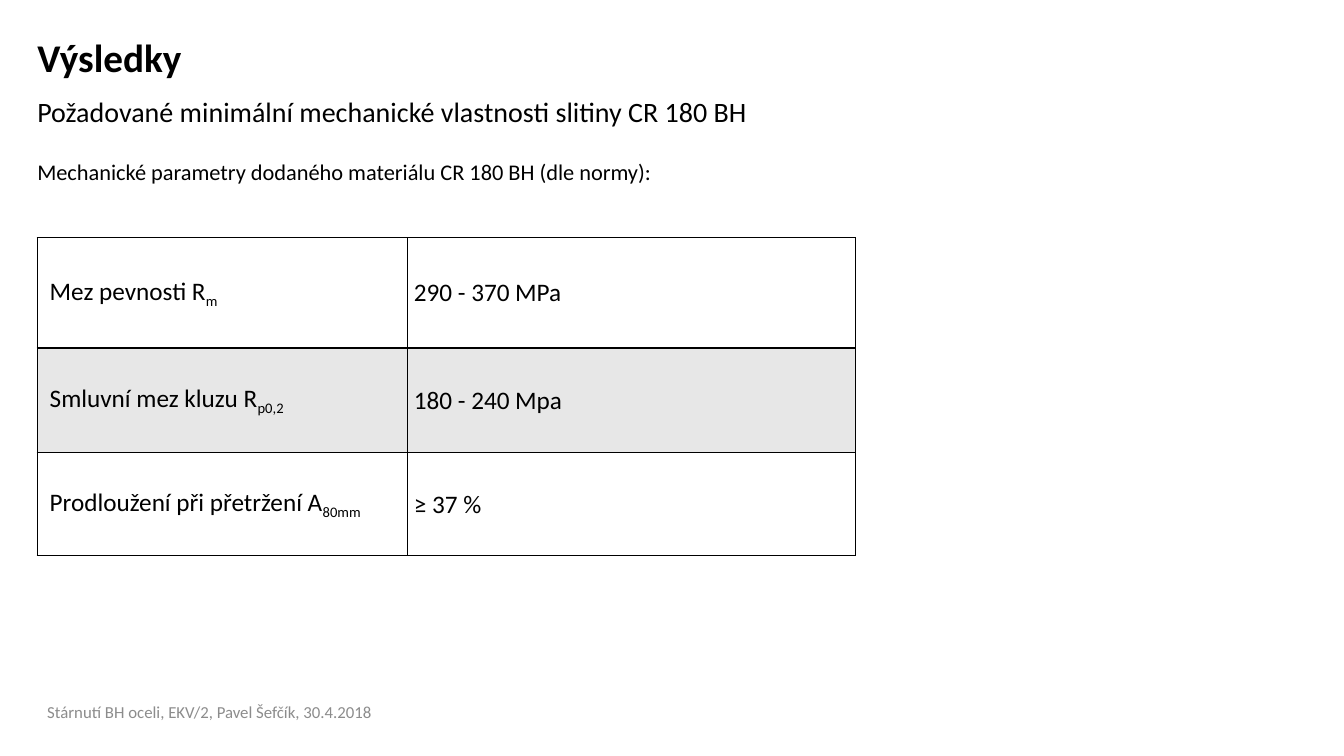
"""Build the slide with the required mechanical properties of CR 180 BH."""
from lxml.etree import SubElement
from pptx import Presentation
from pptx.dml.color import RGBColor
from pptx.enum.text import MSO_ANCHOR, MSO_AUTO_SIZE, PP_ALIGN
from pptx.oxml.ns import qn
from pptx.util import Pt

LEFT = 26.64
WIDTH = 787.68
BLACK = "000000"
BAND = "E7E7E7"
PROPERTIES = [
    ("Mez pevnosti R", "m", "290 - 370 MPa"),
    ("Smluvní mez kluzu R", "p0,2", "180 - 240 Mpa"),
    ("Prodloužení při přetržení A", "80mm", "≥ 37 %"),
]


def colour(value):
    """Turn a hex string into a colour."""
    return RGBColor.from_string(value)


def write(para, text, size=18, fill=BLACK, bold=False, baseline=None, font="Calibri"):
    """Add a formatted span of text to a paragraph."""
    span = para.add_run()
    span.text = text
    span.font.name = font
    span.font.size = Pt(size)
    span.font.bold = bold
    span.font.color.rgb = colour(fill)
    if baseline is not None:
        span.font._element.set("baseline", str(baseline * 1000))


class SlideBuilder:
    """Hold the style and the current slide."""

    def __init__(self, deck):
        """Add a page with a title and a body."""
        self.page = deck.slides.add_slide(deck.slide_layouts[1])

    def place(self, box, top, height, text, width=WIDTH, inset=(0, 0),
              anchor=MSO_ANCHOR.TOP, spacing=None, **style):
        """Position a text shape and write one paragraph in it."""
        box.left, box.top, box.width, box.height = map(Pt, (LEFT, top, width, height))
        frame = box.text_frame
        frame.word_wrap = True
        frame.auto_size = MSO_AUTO_SIZE.NONE
        frame.vertical_anchor = anchor
        frame.margin_left = frame.margin_right = Pt(inset[0])
        frame.margin_top = frame.margin_bottom = Pt(inset[1])
        para = frame.paragraphs[0]
        para.alignment = PP_ALIGN.LEFT
        para.space_before = Pt(0)
        para.line_spacing = spacing
        write(para, text, **style)
        return para

    def title(self, *args, **style):
        """Fill the title placeholder."""
        self.place(self.page.shapes.title, *args, **style)

    def body(self, *args, **style):
        """Fill the body placeholder without a bullet."""
        para = self.place(self.page.placeholders[1], *args, **style)
        properties = para._p.get_or_add_pPr()
        properties.set("marL", "0")
        properties.set("indent", "0")
        SubElement(properties, qn("a:buNone"))

    def text(self, *args, **style):
        """Add a text box."""
        self.place(self.page.shapes.add_textbox(0, 0, 0, 0), *args, **style)

    def cell(self, cell, spans, indent, fill, top=1, bottom=1):
        """Write, border and fill one table cell."""
        cell.margin_left = Pt(indent)
        cell.margin_top = cell.margin_right = Pt(0.72)
        cell.margin_bottom = Pt(0)
        cell.vertical_anchor = MSO_ANCHOR.MIDDLE
        for text, baseline in spans:
            write(cell.text_frame.paragraphs[0], text, baseline=baseline)
        properties = cell._tc.get_or_add_tcPr()
        for side, weight in (("L", 1), ("R", 1), ("T", top), ("B", bottom)):
            line = SubElement(properties, qn(f"a:ln{side}"), w=str(Pt(weight)))
            solid = SubElement(line, qn("a:solidFill"))
            SubElement(solid, qn("a:srgbClr"), val=BLACK)
        if fill:
            cell.fill.solid()
            cell.fill.fore_color.rgb = colour(fill)
        else:
            cell.fill.background()

    def table(self, top, widths, heights, rows):
        """Add the table of properties."""
        box = self.page.shapes.add_table(
            len(rows), len(widths), Pt(LEFT), Pt(top), Pt(sum(widths)), Pt(sum(heights)))
        table = box.table
        table.first_row = table.horz_banding = False
        for column, width in zip(table.columns, widths):
            column.width = Pt(width)
        for index, (name, subscript, value) in enumerate(rows):
            table.rows[index].height = Pt(heights[index])
            look = {
                "fill": BAND if index % 2 else None,
                "top": 1.5 if index == 1 else 1,
                "bottom": 1.5 if index == 0 else 1,
            }
            self.cell(table.cell(index, 0), [(name, None), (subscript, -25)], 8.9, **look)
            self.cell(table.cell(index, 1), [(value, 0)], 4.8, **look)


def main():
    """Build and save the deck."""
    deck = Presentation()
    deck.slide_width, deck.slide_height = Pt(960), Pt(540)
    slide = SlideBuilder(deck)
    slide.text(501.12, 14.4, "Stárnutí BH oceli, EKV/2, Pavel Šefčík, 30.4.2018",
               width=486, inset=(7.2, 3.6), anchor=MSO_ANCHOR.MIDDLE,
               size=12, fill="8C8C8C")
    slide.body(110.16, 408.24,
               "Mechanické parametry dodaného materiálu CR 180 BH (dle normy):",
               spacing=1.15, size=16)
    slide.text(67.68, 28.08, "Požadované minimální mechanické vlastnosti slitiny CR 180 BH",
               spacing=Pt(24), size=20)
    slide.title(25.2, 33.84, "Výsledky", spacing=Pt(32), size=28, bold=True)
    slide.table(169.92, [264.24, 320.4], [78.48, 74.88, 73.44], PROPERTIES)
    deck.save("out.pptx")


if __name__ == "__main__":
    main()
